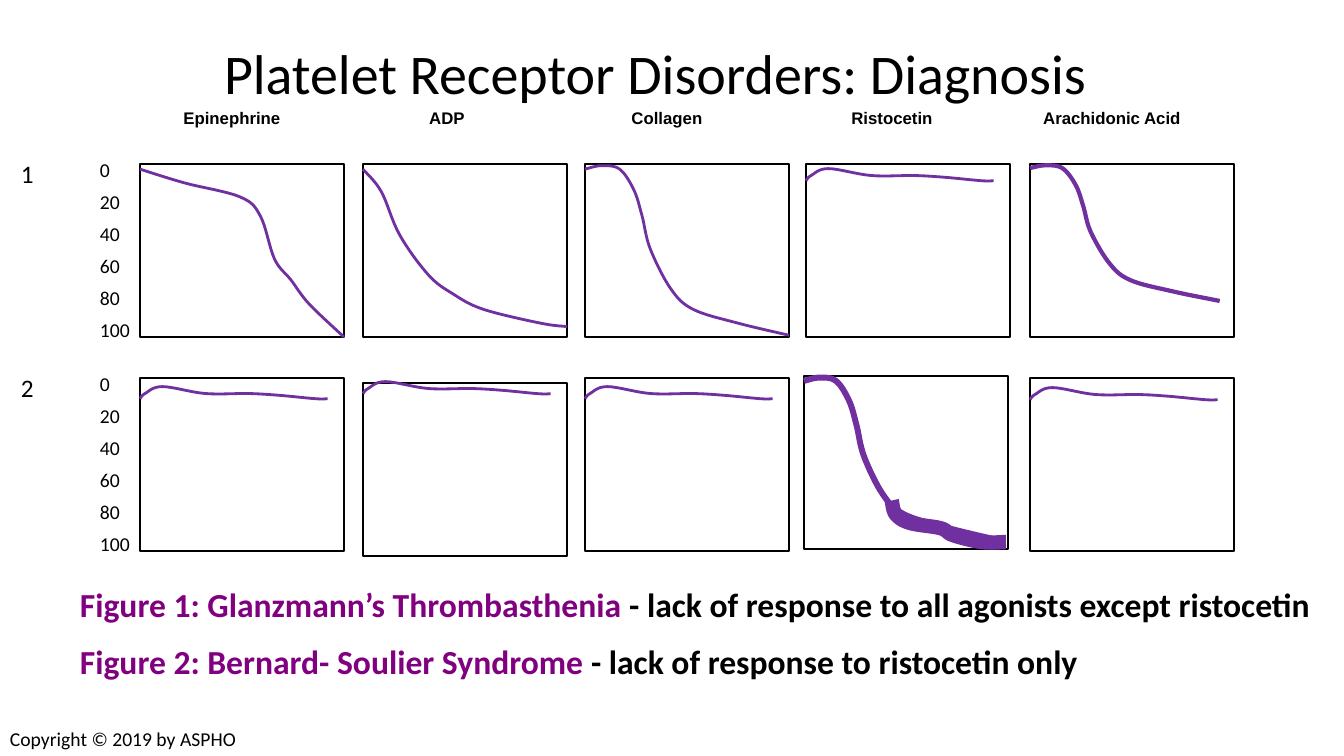
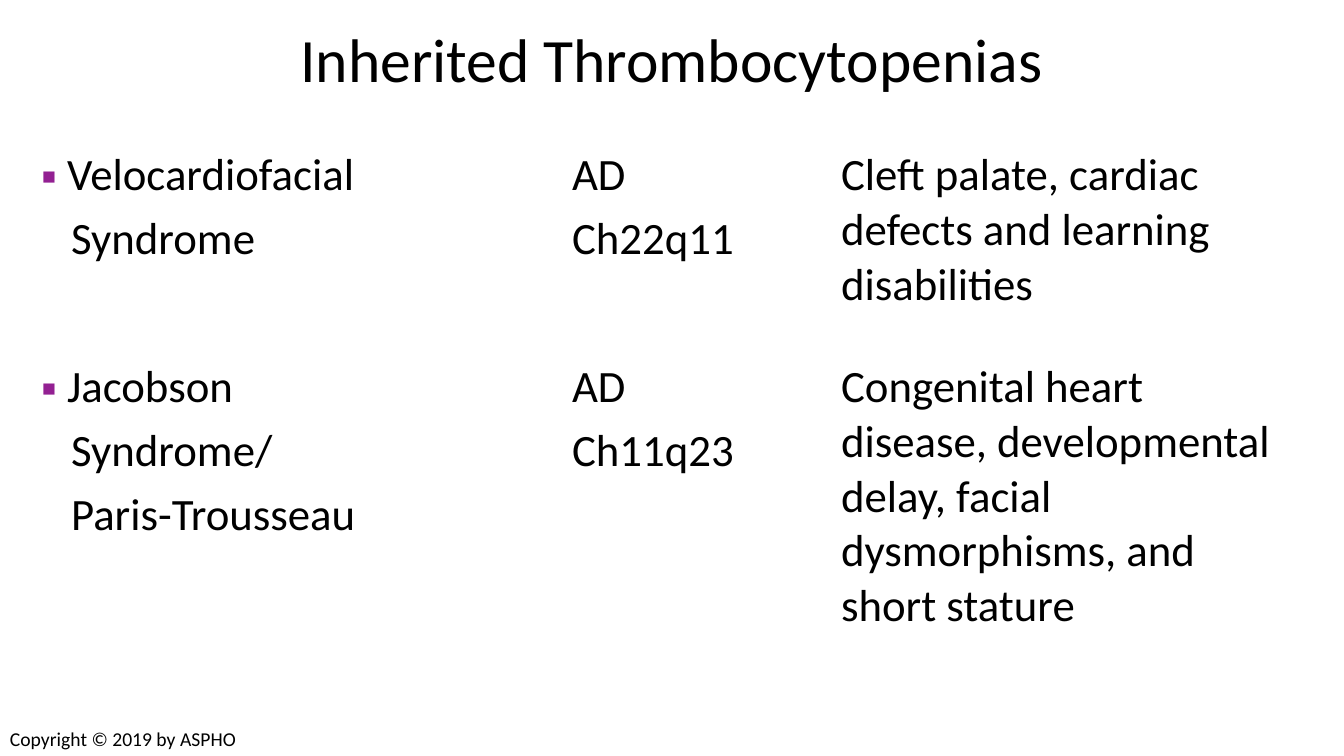
from lxml import etree
from pptx import Presentation
from pptx.dml.color import RGBColor
from pptx.enum.shapes import MSO_SHAPE
from pptx.enum.text import MSO_ANCHOR, PP_ALIGN
from pptx.oxml.ns import qn
from pptx.util import Pt

PX = 12192000 / 1344
COLORS = {
    "text": "000000",
    "disorder": "800080",
    "curve": "7030A0",
    "bullet": "932092",
}

deck = Presentation()
deck.slide_width = round(1344 * PX)
deck.slide_height = round(756 * PX)


def add_text(page, place, lines, size, font="Calibri", bold=False,
             align=PP_ALIGN.LEFT, space_after=0):
    box = page.shapes.add_textbox(*[round(n * PX) for n in place])
    box.text_frame.word_wrap = True
    box.text_frame.text = "\n".join(lines)
    for para in box.text_frame.paragraphs:
        para.alignment = align
        para.space_after = Pt(space_after)
        para.font.name = font
        para.font.size = Pt(size)
        para.font.bold = bold
        para.font.color.rgb = RGBColor.from_string(COLORS["text"])
    return box


def add_page(title, place, size):
    page = deck.slides.add_slide(deck.slide_layouts[5])
    box = page.shapes.title
    box.left, box.top, box.width, box.height = [round(n * PX) for n in place]
    box.text_frame.text = title
    box.text_frame.vertical_anchor = MSO_ANCHOR.MIDDLE
    para = box.text_frame.paragraphs[0]
    para.alignment = PP_ALIGN.CENTER
    para.line_spacing = 0.9
    para.font.name = "Calibri"
    para.font.size = Pt(size)
    para.font.color.rgb = RGBColor.from_string(COLORS["text"])
    add_text(page, (0, 722, 250, 34), ["Copyright © 2019 by ASPHO"], 14)
    return page


page = add_page("Platelet Receptor Disorders: Diagnosis", (210, 37, 890, 78), 40)

PANEL_WIDTH, PANEL_HEIGHT = 204, 173
STEPS = 8

agonists = [("Epinephrine", 232, 140), ("ADP", 447, 363), ("Collagen", 667, 585),
            ("Ristocetin", 892, 806), ("Arachidonic Acid", 1112, 1030)]
for agonist, center, _ in agonists:
    add_text(page, (center - 90, 103, 180, 28), [agonist], 12, "Arial", True,
             PP_ALIGN.CENTER)

# Each response lists (percent of panel width, percent aggregation).
responses = {
    "none": [(0, 12), (2.5, 9), (11, 5), (32, 9), (53, 9), (68, 10), (86, 12), (92, 12)],
    "two waves": [(0, 3), (22, 11), (49, 19), (59, 30), (66, 55), (74, 67), (83, 81),
                  (100, 100)],
    "early": [(0, 3), (9, 16), (18, 41), (32, 64), (44, 75), (59, 84), (87, 92),
              (100, 94)],
    "delayed": [(0, 3), (8, 1), (17, 3), (24, 15), (28, 30), (32, 49), (42, 72),
                (53, 84), (75, 92), (100, 99)],
    "plateau": [(43, 72), (45, 80), (52, 85), (67, 88), (73, 92), (87, 96), (99, 96)],
}
full_size = (1, 1)
figures = [
    {"number": "1", "top": 164, "nudges": {}, "traces": [
        ("Epinephrine", "two waves", full_size, 0, 2),
        ("ADP", "early", full_size, 0, 2),
        ("Collagen", "delayed", full_size, 0, 2),
        ("Ristocetin", "none", full_size, -4, 2),
        ("Arachidonic Acid", "delayed", (0.93, 0.8), 0, 3),
    ]},
    {"number": "2", "top": 378, "nudges": {"ADP": (0, 5), "Ristocetin": (-2, -2)},
     "traces": [
        ("Epinephrine", "none", full_size, 0, 2),
        ("ADP", "none", full_size, -10, 2),
        ("Collagen", "none", full_size, 0, 2),
        ("Ristocetin", "delayed", (0.92, 0.95), 0, 4.25),
        ("Ristocetin", "plateau", full_size, 0, 10.25),
        ("Arachidonic Acid", "none", full_size, 1, 2),
    ]},
]
scale_labels = [str(n) for n in range(0, 101, 20)]

for figure in figures:
    add_text(page, (11, figure["top"] - 11, 50, 40), [figure["number"]], 18)
    add_text(page, (90, figure["top"] - 11, 64, 196), scale_labels, 14, space_after=6)

    corners = {}
    for agonist, _, column_left in agonists:
        shift_x, shift_y = figure["nudges"].get(agonist, (0, 0))
        left, top = column_left + shift_x, figure["top"] + shift_y
        corners[agonist] = left, top
        panel = page.shapes.add_shape(
            MSO_SHAPE.RECTANGLE,
            *[round(n * PX) for n in (left, top, PANEL_WIDTH, PANEL_HEIGHT)])
        panel.shadow.inherit = False
        panel.fill.background()
        panel.line.color.rgb = RGBColor.from_string(COLORS["text"])
        panel.line.width = Pt(1)

    for agonist, response, (stretch_x, stretch_y), drop, weight in figure["traces"]:
        left, top = corners[agonist]
        knots = [(left + x / 100 * PANEL_WIDTH * stretch_x,
                  top + drop + y / 100 * PANEL_HEIGHT * stretch_y)
                 for x, y in responses[response]]
        padded = [knots[0], *knots, knots[-1]]
        smooth = [knots[0]]
        for before, start, end, after in zip(padded, padded[1:], padded[2:], padded[3:]):
            for step in range(1, STEPS + 1):
                t = step / STEPS
                smooth.append(tuple(
                    b + t / 2 * (c - a + t * (2 * a - 5 * b + 4 * c - d
                                              + t * (3 * (b - c) + d - a)))
                    for a, b, c, d in zip(before, start, end, after)))
        points = [(round(x * PX), round(y * PX)) for x, y in smooth]
        builder = page.shapes.build_freeform(*points[0])
        builder.add_line_segments(points[1:], close=False)
        curve = builder.convert_to_shape()
        curve.shadow.inherit = False
        curve.fill.background()
        curve.line.color.rgb = RGBColor.from_string(COLORS["curve"])
        curve.line.width = Pt(weight)

findings = [
    ("Figure 1: Glanzmann’s Thrombasthenia ",
     "- lack of response to all agonists except ristocetin"),
    ("Figure 2: Bernard- Soulier Syndrome ",
     "- lack of response to ristocetin only"),
]
box = add_text(page, (70, 579, 1266, 112), [name for name, _ in findings], 24, bold=True)
for para, (_, finding) in zip(box.text_frame.paragraphs, findings):
    para.runs[0].font.color.rgb = RGBColor.from_string(COLORS["disorder"])
    para.add_run().text = finding
box.text_frame.paragraphs[1].space_before = Pt(12)

page = add_page("Inherited Thrombocytopenias", (0, 0, 1344, 126), 44)

syndromes = [
    (["Velocardiofacial", "Syndrome"], ["AD", "Ch22q11"],
     ["Cleft palate, cardiac defects and learning disabilities"]),
    (["Jacobson", "Syndrome/", "Paris-Trousseau"], ["AD", "Ch11q23"],
     ["Congenital heart disease, developmental delay, facial dysmorphisms, "
      "and short stature"]),
]
table = page.shapes.add_table(
    2, 3, *[round(n * PX) for n in (31, 143, 1273, 524)]).table
table.first_row = False
table.horz_banding = False
for column, width in zip(table.columns, (531, 269, 473)):
    column.width = round(width * PX)
for row, height in zip(table.rows, (212, 312)):
    row.height = round(height * PX)

for row, entries in zip(table.rows, syndromes):
    for column_index, (cell, lines) in enumerate(zip(row.cells, entries)):
        cell.fill.background()
        cell.text_frame.text = "\n".join(lines)
        for line_index, para in enumerate(cell.text_frame.paragraphs):
            if line_index:
                para.space_before = Pt(6.4)
            if column_index == 0:
                props = para._p.get_or_add_pPr()
                props.set("marL", str(round((30 if line_index else 26) * PX)))
                props.set("indent", str(0 if line_index else round(-26 * PX)))
                if line_index == 0:
                    color = etree.SubElement(props, qn("a:buClr"))
                    etree.SubElement(color, qn("a:srgbClr"), val=COLORS["bullet"])
                    etree.SubElement(props, qn("a:buFont"), typeface="Arial")
                    etree.SubElement(props, qn("a:buChar"), char="▪")
            para.font.name = "Calibri"
            para.font.size = Pt(32)
            para.font.color.rgb = RGBColor.from_string(COLORS["text"])

deck.save("out.pptx")
